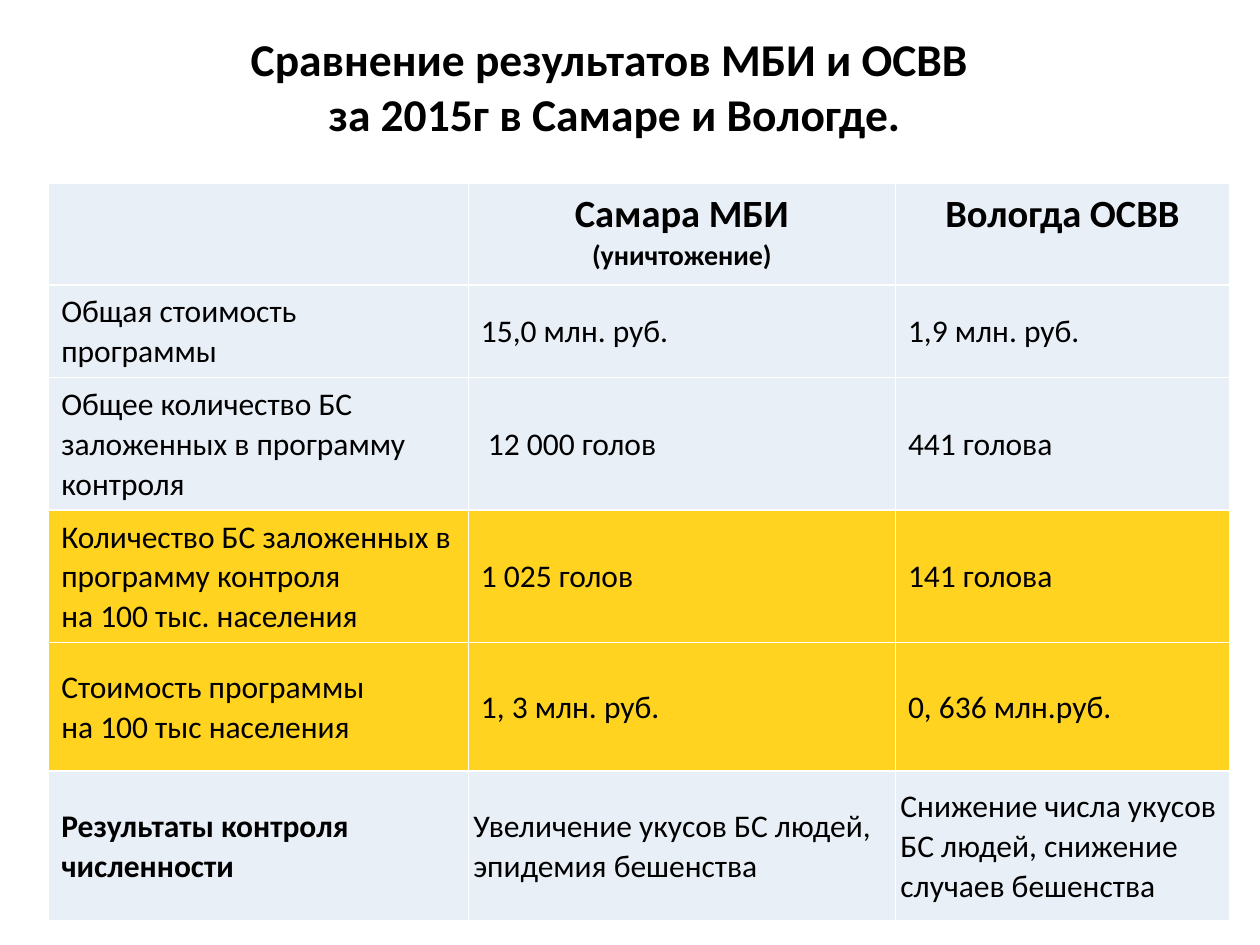
from dataclasses import dataclass

from lxml.etree import SubElement
from pptx import Presentation
from pptx.dml.color import RGBColor as Color
from pptx.enum.text import MSO_ANCHOR as Anchor, MSO_AUTO_SIZE as AutoSize, PP_ALIGN as Align
from pptx.oxml.ns import qn
from pptx.util import Pt


@dataclass(frozen=True)
class Theme:
    font: str = "Calibri"
    ink: str = "000000"
    pale: str = "E9EFF7"
    highlight: str = "FFD320"
    border: str = "FFFFFF"
    border_width: float = 0.91
    title_size: float = 26
    header_size: float = 22
    note_size: float = 16
    body_size: float = 18
    line_spacing: float = 1.04


@dataclass(frozen=True)
class Row:
    height: float
    label: str
    samara: str
    vologda: str
    fill: str = Theme.pale
    label_bold: bool = False
    value_inset: float = 7.2


THEME = Theme()
TITLE = "Сравнение результатов МБИ и ОСВВ \nза 2015г в Самаре и Вологде."
HEADER_HEIGHT = 58.3
HEADER_NOTE = "(уничтожение)"
COLUMN_WIDTHS = (239.8, 244.1, 190.8)
ROWS = (
    Row(51.1, "Общая стоимость программы", "15,0 млн. руб.", "1,9 млн. руб."),
    Row(73.4, "Общее количество БС заложенных в программу контроля",
        " 12 000 голов", "441 голова"),
    Row(73.4, "Количество БС заложенных в программу контроля\nна 100 тыс. населения",
        "1 025 голов", "141 голова", fill=THEME.highlight),
    Row(73.4, "Стоимость программы\nна 100 тыс населения",
        "1, 3 млн. руб.", "0, 636 млн.руб.", fill=THEME.highlight),
    Row(85.7, "Результаты контроля численности",
        "Увеличение укусов БС людей, эпидемия бешенства",
        "Снижение числа укусов БС людей, снижение случаев бешенства",
        label_bold=True, value_inset=2.88),
)


def write_text(frame, text: str, size: float, bold: bool, align: Align, spacing: float) -> None:
    frame.text = text
    for para in frame.paragraphs:
        para.alignment = align
        para.line_spacing = spacing
        font = para.font
        font.name, font.size, font.bold = THEME.font, Pt(size), bold
        font.color.rgb = Color.from_string(THEME.ink)


def style_cell(cell, fill: str) -> None:
    """Draw the cell's four borders and then its fill, in schema order."""
    properties = cell._tc.get_or_add_tcPr()
    for side in ("a:lnL", "a:lnR", "a:lnT", "a:lnB"):
        line = SubElement(properties, qn(side), w=str(Pt(THEME.border_width)))
        solid = SubElement(line, qn("a:solidFill"))
        SubElement(solid, qn("a:srgbClr"), val=THEME.border)
    cell.fill.solid()
    cell.fill.fore_color.rgb = Color.from_string(fill)


def add_title(page) -> None:
    title = page.shapes.title
    title.left, title.top, title.width, title.height = Pt(27.4), Pt(14.4), Pt(648), Pt(90)
    frame = title.text_frame
    frame.word_wrap = True
    frame.auto_size = AutoSize.NONE
    frame.vertical_anchor = Anchor.TOP
    write_text(frame, TITLE, THEME.title_size, True, Align.CENTER, 1.0)


def fill_header(table) -> None:
    for column, text in enumerate(("", "Самара МБИ ", "Вологда ОСВВ")):
        cell = table.cell(0, column)
        style_cell(cell, THEME.pale)
        write_text(cell.text_frame, text, THEME.header_size, True,
                   Align.CENTER, THEME.line_spacing)
    span = table.cell(0, 1).text_frame.paragraphs[0].add_run()
    span.text = HEADER_NOTE
    span.font.size = Pt(THEME.note_size)


def fill_row(table, index: int, row: Row) -> None:
    for column, text in enumerate((row.label, row.samara, row.vologda)):
        cell = table.cell(index, column)
        style_cell(cell, row.fill)
        cell.vertical_anchor = Anchor.MIDDLE
        if column:
            cell.margin_left = cell.margin_right = Pt(row.value_inset)
        write_text(cell.text_frame, text, THEME.body_size,
                   row.label_bold and column == 0, Align.LEFT, THEME.line_spacing)


def add_comparison(page) -> None:
    heights = (HEADER_HEIGHT, *(row.height for row in ROWS))
    table = page.shapes.add_table(
        len(heights), len(COLUMN_WIDTHS), Pt(27.8), Pt(104.5),
        Pt(sum(COLUMN_WIDTHS)), Pt(sum(heights))).table
    table.first_row = table.horz_banding = False
    for column, width in zip(table.columns, COLUMN_WIDTHS):
        column.width = Pt(width)
    for table_row, height in zip(table.rows, heights):
        table_row.height = Pt(height)
    fill_header(table)
    for index, row in enumerate(ROWS, start=1):
        fill_row(table, index, row)


def main() -> None:
    deck = Presentation()
    deck.slide_width, deck.slide_height = Pt(720), Pt(540)
    page = deck.slides.add_slide(deck.slide_layouts.get_by_name("Title Only"))
    add_title(page)
    add_comparison(page)
    deck.save("out.pptx")


if __name__ == "__main__":
    main()
